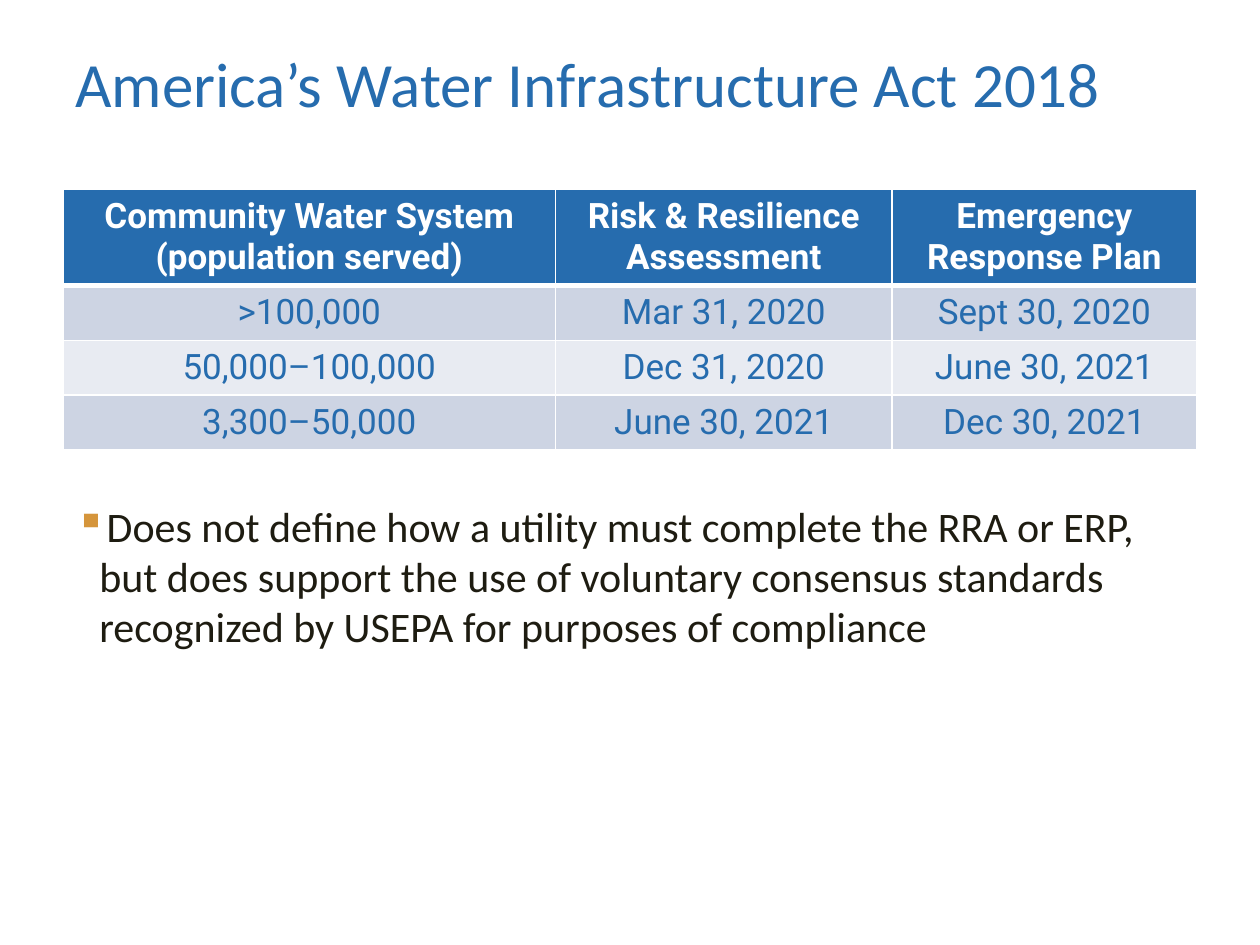
import pptx
import pptx.util
import pptx.dml.color
import pptx.enum.text
import pptx.oxml
import pptx.oxml.ns

TITLE = "America’s Water Infrastructure Act 2018"
ROWS = [
    ("Community Water System\n(population served)", "Risk & Resilience Assessment", "Emergency Response Plan"),
    (">100,000", "Mar 31, 2020", "Sept 30, 2020"),
    ("50,000–100,000", "Dec 31, 2020", "June 30, 2021"),
    ("3,300–50,000", "June 30, 2021", "Dec 30, 2021"),
]
BULLET = ("Does not define how a utility must complete the RRA or ERP, but does support "
          "the use of voluntary consensus standards recognized by USEPA for purposes of compliance")
COLUMNS = (3.91, 2.67, 2.42)
HEADER_HEIGHT, ROW_HEIGHT = 0.74, 0.43
LEFT, WIDTH = 0.5, 9
BLUE, WHITE, INK, GOLD = "266CAE", "FFFFFF", "1E1C11", "D5953B"
BANDS = ("E8EBF2", "CDD4E3")

inch = pptx.util.Inches
MIDDLE = pptx.enum.text.MSO_ANCHOR.MIDDLE
CENTER = pptx.enum.text.PP_ALIGN.CENTER


def rgb(color):
    return pptx.dml.color.RGBColor.from_string(color)


def set_font(p, name, size, color, bold=False):
    p.font.name = name
    p.font.size = pptx.util.Pt(size)
    p.font.color.rgb = rgb(color)
    p.font.bold = bold


def add_xml(parent, tag, body="", attrs=""):
    ns = pptx.oxml.ns.nsdecls("a")
    parent.append(pptx.oxml.parse_xml(f"<a:{tag} {ns} {attrs}>{body}</a:{tag}>"))


def add_text(slide, top, height, text, size, color):
    sp = slide.shapes.add_textbox(inch(LEFT), inch(top), inch(WIDTH), inch(height))
    tf = sp.text_frame
    tf.word_wrap = True
    p = tf.paragraphs[0]
    p.text = text
    set_font(p, "Calibri", size, color)
    return tf


def style_cell(cell, text, header, fill):
    cell.text = text
    cell.vertical_anchor = MIDDLE
    for p in cell.text_frame.paragraphs:
        p.alignment = CENTER
        set_font(p, "Roboto", 20, WHITE if header else BLUE, header)
    tc_pr = cell._tc.get_or_add_tcPr()
    line = f'<a:solidFill><a:srgbClr val="{WHITE}"/></a:solidFill>'
    for side in "LRTB":
        points = 3 if header and side == "B" else 1
        add_xml(tc_pr, f"ln{side}", line, f'w="{pptx.util.Pt(points)}"')
    cell.fill.solid()
    cell.fill.fore_color.rgb = rgb(fill)


def add_schedule(slide):
    height = HEADER_HEIGHT + ROW_HEIGHT * (len(ROWS) - 1)
    table = slide.shapes.add_table(len(ROWS), len(COLUMNS), inch(LEFT), inch(1.5),
                                   inch(WIDTH), inch(height)).table
    for column, width in zip(table.columns, COLUMNS):
        column.width = inch(width)
    for i, row in enumerate(ROWS):
        header = i == 0
        table.rows[i].height = inch(HEADER_HEIGHT if header else ROW_HEIGHT)
        for j, text in enumerate(row):
            style_cell(table.cell(i, j), text, header, BLUE if header else BANDS[i % 2])


def add_bullet(p):
    p_pr = p._p.get_or_add_pPr()
    indent = inch(0.19)
    p_pr.set("marL", str(indent))
    p_pr.set("indent", str(-indent))
    add_xml(p_pr, "buClr", f'<a:srgbClr val="{GOLD}"/>')
    add_xml(p_pr, "buChar", attrs='char="▪"')


prs = pptx.Presentation()
prs.slide_width, prs.slide_height = inch(10), inch(7.5)
slide = prs.slides.add_slide(prs.slide_layouts[6])
add_text(slide, 0.3, 0.7, TITLE, 36, BLUE).vertical_anchor = MIDDLE
add_schedule(slide)
add_bullet(add_text(slide, 3.92, 2.78, BULLET, 24, INK).paragraphs[0])
prs.save("out.pptx")
